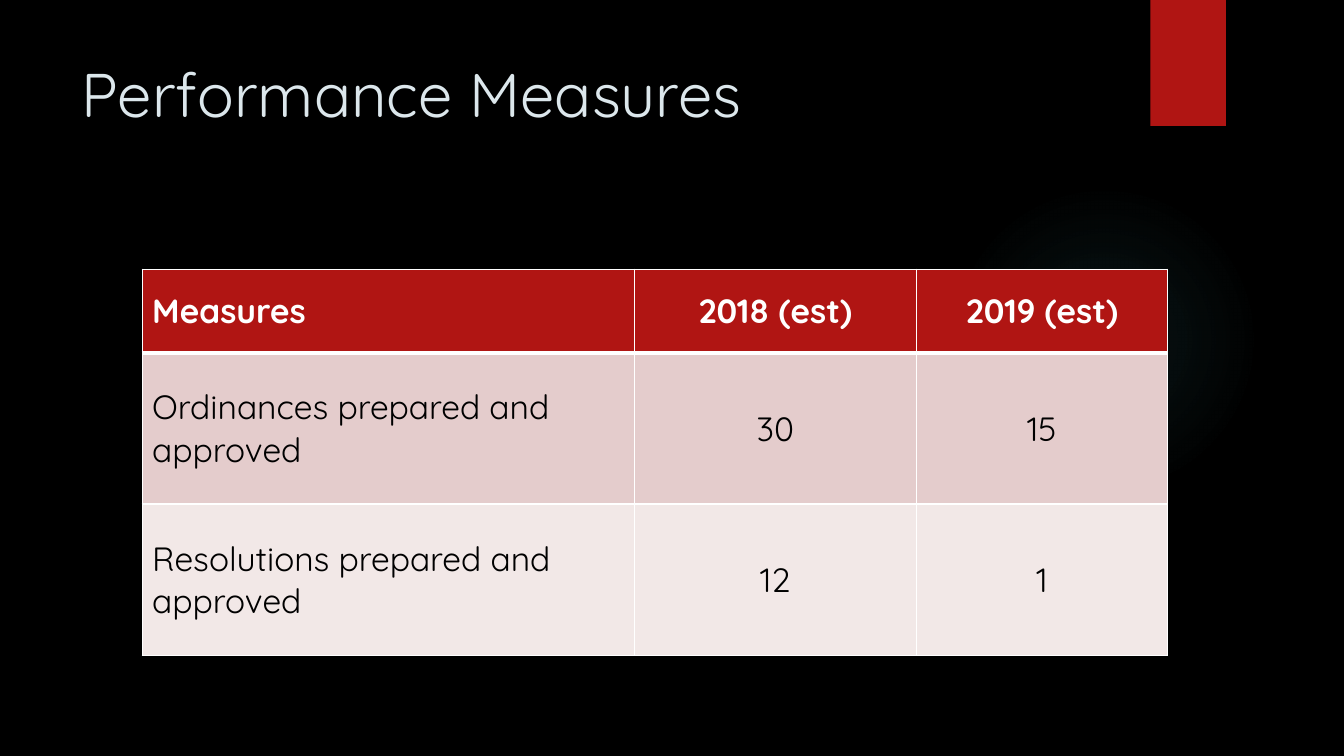
from lxml import etree
from pptx import Presentation
from pptx.dml.color import RGBColor
from pptx.enum.shapes import MSO_SHAPE
from pptx.enum.text import MSO_ANCHOR, PP_ALIGN
from pptx.oxml import parse_xml
from pptx.oxml.ns import nsdecls, qn
from pptx.util import Inches, Pt

BLACK = RGBColor(0x00, 0x00, 0x00)
WHITE = RGBColor(0xFF, 0xFF, 0xFF)
RED = RGBColor(0xB0, 0x15, 0x13)
ROSE = RGBColor(0xE4, 0xCC, 0xCC)
PALE_ROSE = RGBColor(0xF2, 0xE8, 0xE7)
TITLE_COLOR = RGBColor(0xDC, 0xE7, 0xEC)
GLOW = RGBColor(0x50, 0xB9, 0xC1)
FONT = "Quicksand"
LEFT, CENTER = PP_ALIGN.LEFT, PP_ALIGN.CENTER
TOP, MIDDLE = MSO_ANCHOR.TOP, MSO_ANCHOR.MIDDLE
OVAL, RECTANGLE = MSO_SHAPE.OVAL, MSO_SHAPE.RECTANGLE

GLOW_STOPS = [(0, 7), (36, 6), (69, 0)]  # position and opacity, percent
COLUMN_WIDTHS = [4.88, 2.8, 2.49]
ROW_HEIGHTS = [0.83, 1.5, 1.5]
ROW_FILLS = [RED, ROSE, PALE_ROSE]
MEASURES = [
    ["Measures", "2018 (est)", "2019 (est)"],
    ["Ordinances prepared and approved", "30", "15"],
    ["Resolutions prepared and approved", "12", "1"],
]


def add_run(paragraph, text, size, color, bold=False):
    run = paragraph.add_run()
    run.text = text
    run.font.name = FONT
    run.font.size = Pt(size)
    run.font.bold = bold
    run.font.color.rgb = color


def add_border(cell, side, width):
    """Draw a white line on one side (L, R, T or B) of a table cell."""
    line = etree.SubElement(cell._tc.get_or_add_tcPr(), qn(f"a:ln{side}"), w=str(Pt(width)))
    fill = etree.SubElement(line, qn("a:solidFill"))
    etree.SubElement(fill, qn("a:srgbClr"), val=str(WHITE))


presentation = Presentation()
presentation.slide_width = Inches(13.33)
presentation.slide_height = Inches(7.5)
slide = presentation.slides.add_slide(presentation.slide_layouts[5])
slide.background.fill.solid()
slide.background.fill.fore_color.rgb = BLACK

# Background glow and red tab
glow = slide.shapes.add_shape(OVAL, Inches(9.41), Inches(1.83), Inches(3.08), Inches(3.08))
stops = "".join(
    f'<a:gs pos="{position * 1000}"><a:srgbClr val="{GLOW}">'
    f'<a:alpha val="{opacity * 1000}"/></a:srgbClr></a:gs>'
    for position, opacity in GLOW_STOPS
)
glow._element.spPr.append(parse_xml(
    f'<a:gradFill {nsdecls("a")}><a:gsLst>{stops}</a:gsLst><a:path path="circle">'
    '<a:fillToRect l="50000" t="50000" r="50000" b="50000"/></a:path></a:gradFill>'
))
tab = slide.shapes.add_shape(RECTANGLE, Inches(11.41), 0, Inches(0.75), Inches(1.25))
tab.fill.solid()
tab.fill.fore_color.rgb = RED
for shape in (glow, tab):
    shape.line.fill.background()
    shape.shadow.inherit = False

# Title
title = slide.shapes.title
title.left, title.top = Inches(0.71), Inches(0.5)
title.width, title.height = Inches(10.63), Inches(1.53)
title.text_frame.vertical_anchor = TOP
title_paragraph = title.text_frame.paragraphs[0]
title_paragraph.alignment = LEFT
add_run(title_paragraph, "Performance Measures", 44, TITLE_COLOR)

# Table of measures
table = slide.shapes.add_table(
    len(ROW_HEIGHTS), len(COLUMN_WIDTHS), Inches(1.41), Inches(2.67),
    Inches(sum(COLUMN_WIDTHS)), Inches(sum(ROW_HEIGHTS)),
).table
for column, width in zip(table.columns, COLUMN_WIDTHS):
    column.width = Inches(width)
for row_index, texts in enumerate(MEASURES):
    table.rows[row_index].height = Inches(ROW_HEIGHTS[row_index])
    is_header = row_index == 0
    for column_index, text in enumerate(texts):
        cell = table.cell(row_index, column_index)
        for side in "LRTB":
            touches_header_rule = (row_index, side) in [(0, "B"), (1, "T")]
            add_border(cell, side, 3 if touches_header_rule else 1)
        cell.fill.solid()
        cell.fill.fore_color.rgb = ROW_FILLS[row_index]
        cell.vertical_anchor = MIDDLE
        paragraph = cell.text_frame.paragraphs[0]
        paragraph.alignment = LEFT if column_index == 0 else CENTER
        add_run(paragraph, text, 24, WHITE if is_header else BLACK, is_header)

presentation.save("out.pptx")
